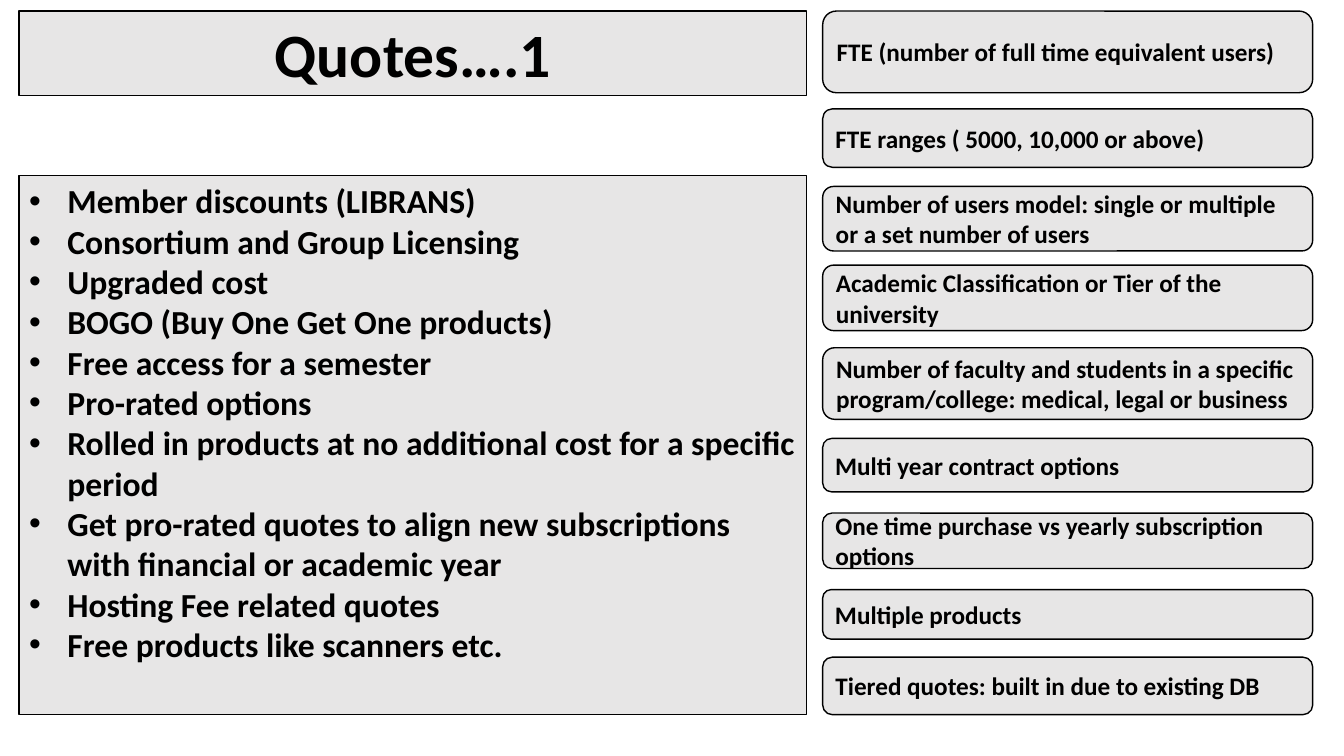
from pptx import Presentation
from pptx.dml.color import RGBColor
from pptx.enum.shapes import MSO_SHAPE
from pptx.enum.text import MSO_ANCHOR, PP_ALIGN
from pptx.oxml.ns import qn
from pptx.util import Inches, Pt
from lxml import etree

RECT, ROUNDED = MSO_SHAPE.RECTANGLE, MSO_SHAPE.ROUNDED_RECTANGLE
TOP, MIDDLE = MSO_ANCHOR.TOP, MSO_ANCHOR.MIDDLE
LEFT, CENTER = PP_ALIGN.LEFT, PP_ALIGN.CENTER

# Content
TITLE = "Quotes….1"
QUOTE_OPTIONS = [
    "Member discounts (LIBRANS)",
    "Consortium and Group Licensing",
    "Upgraded cost",
    "BOGO (Buy One Get One products)",
    "Free access for a semester",
    "Pro-rated options",
    "Rolled in products at no additional cost for a specific period",
    "Get pro-rated quotes to align new subscriptions with financial or academic year",
    "Hosting Fee related quotes",
    "Free products like scanners etc.",
]
PRICING_MODELS = [  # text, top, height
    ("FTE (number of full time equivalent users)", 0.11, 0.81),
    ("FTE ranges ( 5000, 10,000 or above)", 1.08, 0.58),
    ("Number of users model: single or multiple or a set number of users", 1.85, 0.64),
    ("Academic Classification or Tier of the university", 2.63, 0.65),
    ("Number of faculty and students in a specific program/college: "
     "medical, legal or business", 3.45, 0.71),
    ("Multi year contract options", 4.35, 0.53),
    ("One time purchase vs yearly subscription options", 5.09, 0.55),
    ("Multiple products", 5.85, 0.49),
    ("Tiered quotes: built in due to existing DB", 6.52, 0.57),
]

# Theme and layout
THEME = {
    "font": "Calibri",
    "fill": RGBColor(0xE7, 0xE6, 0xE6),
    "ink": RGBColor(0, 0, 0),
    "line": Pt(1),
    "title": Pt(44),
    "list": Pt(24),
    "model": Pt(18),
}
MAIN_LEFT, MAIN_WIDTH = 0.19, 7.81
MODEL_LEFT, MODEL_WIDTH = 8.16, 4.86
BULLET_INDENT = Inches(0.38)


def add_panel(slide, kind, box, lines, size, anchor=TOP, align=LEFT):
    sp = slide.shapes.add_shape(kind, *map(Inches, box))
    sp.shadow.inherit = False
    sp.fill.solid()
    sp.fill.fore_color.rgb = THEME["fill"]
    sp.line.color.rgb = THEME["ink"]
    sp.line.width = THEME["line"]
    tf = sp.text_frame
    tf.word_wrap = True
    tf.vertical_anchor = anchor
    tf.text = "\n".join(lines)
    for p in tf.paragraphs:
        p.alignment = align
        for r in p.runs:
            r.font.name = THEME["font"]
            r.font.size = THEME[size]
            r.font.bold = True
            r.font.color.rgb = THEME["ink"]
    return sp


def add_bullet(p):
    pPr = p._p.get_or_add_pPr()
    pPr.set("marL", str(BULLET_INDENT))
    pPr.set("indent", str(-BULLET_INDENT))
    etree.SubElement(pPr, qn("a:buFont"), typeface="Arial")
    etree.SubElement(pPr, qn("a:buChar"), char="•")


def main():
    prs = Presentation()
    prs.slide_width, prs.slide_height = Inches(13.33), Inches(7.5)
    s = prs.slides.add_slide(prs.slide_layouts[6])

    # Title
    add_panel(s, RECT, (MAIN_LEFT, 0.11, MAIN_WIDTH, 0.84), [TITLE], "title", align=CENTER)

    # Bulleted quote options
    options = add_panel(s, RECT, (MAIN_LEFT, 1.74, MAIN_WIDTH, 5.35), QUOTE_OPTIONS, "list")
    for p in options.text_frame.paragraphs:
        add_bullet(p)

    # Pricing models on the right
    for text, top, height in PRICING_MODELS:
        add_panel(s, ROUNDED, (MODEL_LEFT, top, MODEL_WIDTH, height), [text], "model", MIDDLE)

    prs.save("out.pptx")


if __name__ == "__main__":
    main()
